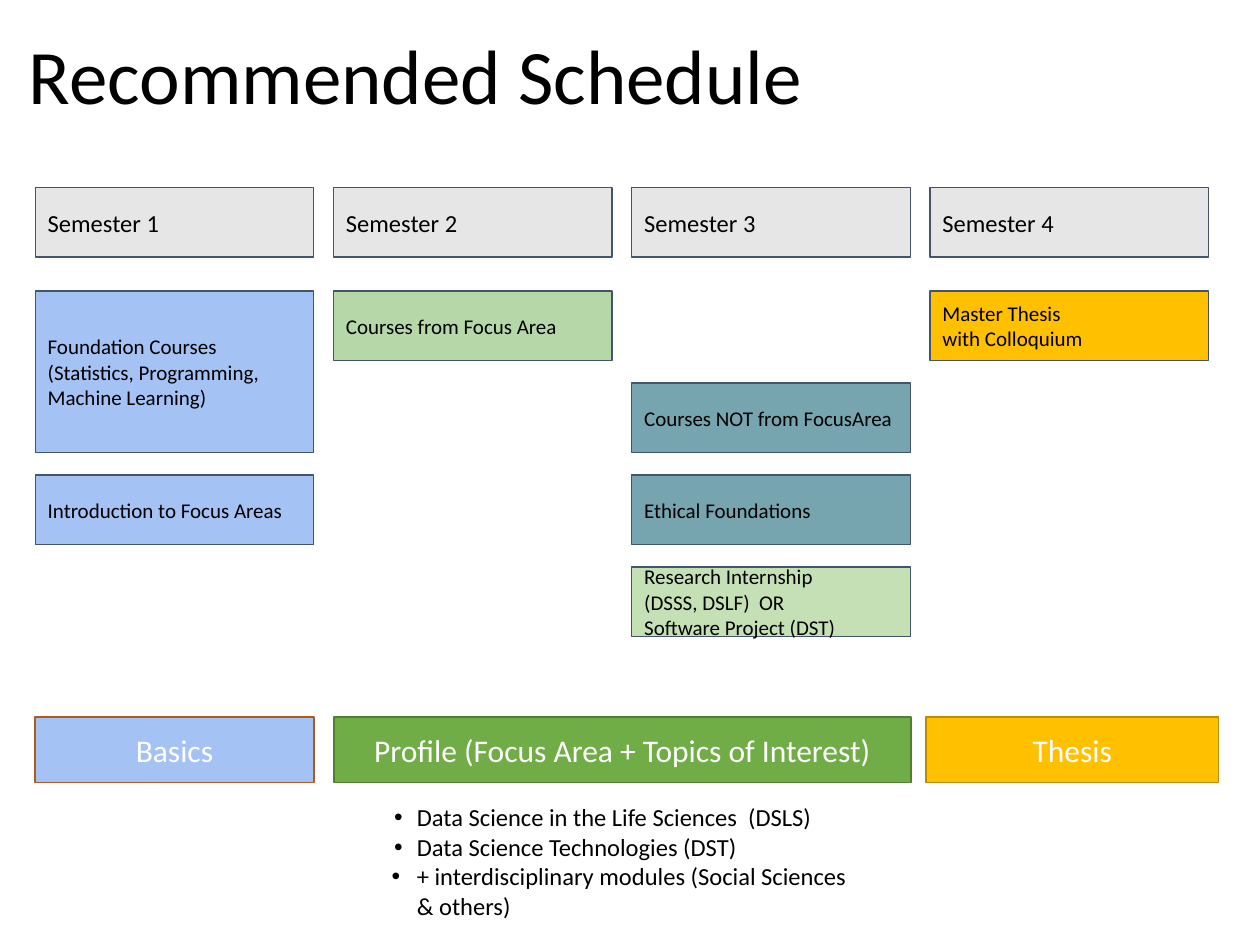
from lxml.etree import SubElement
from pptx import Presentation
from pptx.dml.color import RGBColor
from pptx.enum.shapes import MSO_SHAPE
from pptx.enum.text import MSO_ANCHOR, MSO_AUTO_SIZE, PP_ALIGN
from pptx.oxml.ns import qn
from pptx.util import Inches, Pt

LEFT, COLUMN_PITCH, BOX_WIDTH = 0.28, 2.367, 2.21
TOP, ROW_PITCH, BOX_HEIGHT = 2.31, 0.73, 0.55
HEADER_TOP = 1.49
PHASE_TOP, PHASE_HEIGHT = 5.69, 0.52

BLUE, TEAL, AMBER = "A4C2F4", "76A5AF", "FFC000"
SLATE, BLACK, WHITE = "44546A", "000000", "FFFFFF"

COURSES = [
    (0, 0, 2, "Foundation Courses\n(Statistics, Programming, Machine Learning)", BLUE),
    (0, 2, 1, "Introduction to Focus Areas", BLUE),
    (1, 0, 1, "Courses from Focus Area", "B6D7A8"),
    (2, 1, 1, "Courses NOT from FocusArea", TEAL),
    (2, 2, 1, "Ethical Foundations", TEAL),
    (2, 3, 1, "Research Internship\n(DSSS, DSLF)  OR\nSoftware Project (DST)", "C5E0B4"),
    (3, 0, 1, "Master Thesis\nwith Colloquium", AMBER),
]
PHASES = [
    (0.28, 2.21, "Basics", BLUE, "AC5B23"),
    (2.65, 4.58, "Profile (Focus Area + Topics of Interest)", "70AD47", "517E33"),
    (7.35, 2.32, "Thesis", AMBER, "BA8C00"),
]
PROFILE_TOPICS = [
    ("Data Science in the Life Sciences  (DSLS)", 0.18),
    ("Data Science Technologies (DST)", 0.18),
    ("+ interdisciplinary modules (Social Sciences & others)", 0.2),
]


def color(hex_value):
    return RGBColor.from_string(hex_value)


def write(paragraph, text, size, ink=BLACK, align=PP_ALIGN.LEFT, spacing=1.0):
    paragraph.text = text
    paragraph.alignment = align
    paragraph.line_spacing = spacing
    for run in paragraph.runs:
        run.font.size = Pt(size)
        run.font.name = "Calibri"
        run.font.color.rgb = color(ink)
    for line_break in paragraph._p.findall(qn("a:br")):
        SubElement(line_break, qn("a:rPr"), sz=str(size * 100))


def set_frame(frame, anchor, vertical_inset=0.05):
    frame.word_wrap = True
    frame.auto_size = MSO_AUTO_SIZE.NONE
    frame.vertical_anchor = anchor
    frame.margin_left = frame.margin_right = Inches(0.1)
    frame.margin_top = frame.margin_bottom = Inches(vertical_inset)


def add_box(slide, bounds, text, fill, outline=SLATE, weight=0.75, inset=0.1, **text_format):
    box = slide.shapes.add_shape(MSO_SHAPE.RECTANGLE, *map(Inches, bounds))
    box.shadow.inherit = False
    box.fill.solid()
    box.fill.fore_color.rgb = color(fill)
    box.line.color.rgb = color(outline)
    box.line.width = Pt(weight)
    set_frame(box.text_frame, MSO_ANCHOR.MIDDLE, inset)
    write(box.text_frame.paragraphs[0], text, **text_format)


def add_title(slide, text):
    title = slide.shapes.title
    title.left, title.top, title.width, title.height = map(Inches, (0.13, -0.09, 8.62, 1.45))
    set_frame(title.text_frame, MSO_ANCHOR.MIDDLE)
    write(title.text_frame.paragraphs[0], text, size=44, spacing=0.9)


def add_bullets(slide, bounds, items):
    frame = slide.shapes.add_textbox(*map(Inches, bounds)).text_frame
    set_frame(frame, MSO_ANCHOR.TOP)
    for index, (text, hanging) in enumerate(items):
        paragraph = frame.add_paragraph() if index else frame.paragraphs[0]
        write(paragraph, text, size=14)
        properties = paragraph._p.get_or_add_pPr()
        properties.set("marL", str(Inches(0.2)))
        properties.set("indent", str(-Inches(hanging)))
        bullet_color = SubElement(properties, qn("a:buClr"))
        SubElement(bullet_color, qn("a:srgbClr"), val=BLACK)
        SubElement(properties, qn("a:buFont"), typeface="Arial")
        SubElement(properties, qn("a:buChar"), char="•")


def column_left(column):
    return LEFT + column * COLUMN_PITCH


def main():
    presentation = Presentation()
    presentation.slide_width, presentation.slide_height = Inches(10), Inches(7.5)
    slide = presentation.slides.add_slide(presentation.slide_layouts[5])

    add_title(slide, "Recommended Schedule")
    for column in range(4):
        bounds = (column_left(column), HEADER_TOP, BOX_WIDTH, BOX_HEIGHT)
        add_box(slide, bounds, f"Semester {column + 1}", "E7E6E6", size=14)
    for column, row, row_span, course, fill in COURSES:
        height = BOX_HEIGHT + (row_span - 1) * ROW_PITCH
        bounds = (column_left(column), TOP + row * ROW_PITCH, BOX_WIDTH, height)
        add_box(slide, bounds, course, fill, size=12)
    for left, width, phase, fill, outline in PHASES:
        add_box(slide, (left, PHASE_TOP, width, PHASE_HEIGHT), phase, fill, outline,
                weight=1, inset=0.05, size=18, ink=WHITE, align=PP_ALIGN.CENTER)
    add_bullets(slide, (3.01, 6.32, 3.84, 0.94), PROFILE_TOPICS)

    presentation.save("out.pptx")


if __name__ == "__main__":
    main()
